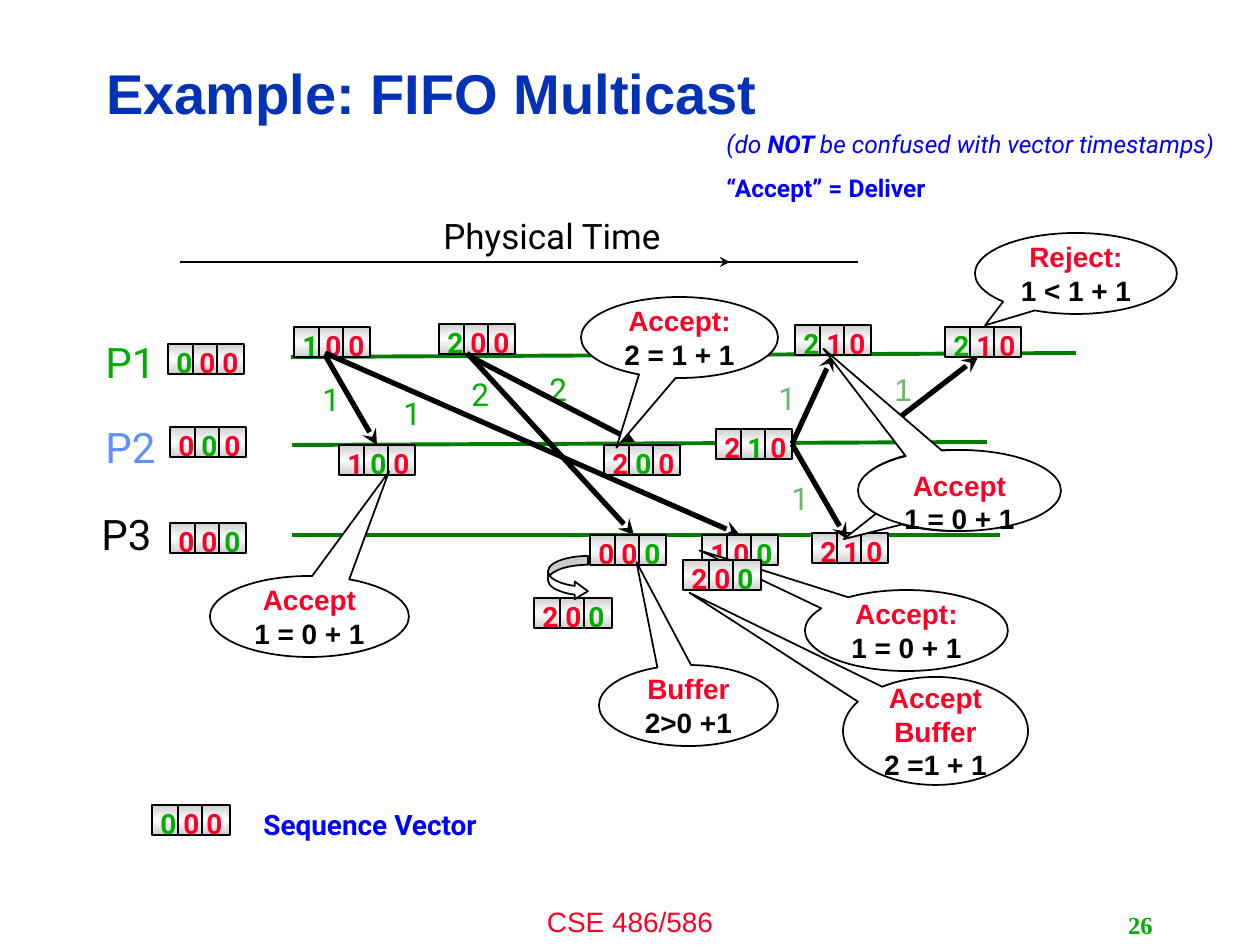
"""Build the FIFO multicast example slide with its timelines, sequence vectors and callouts."""
from copy import deepcopy
from lxml import etree
from pptx import Presentation
from pptx import util as u
from pptx.dml.color import RGBColor
from pptx.enum import shapes, text
from pptx.oxml.ns import qn

PX = 914400 / 126
COLORS = {"blue": "0332B7", "note": "0000FF", "red": "FC0128", "green": "00AE00",
          "pale": "6BB76D", "sky": "618FFD", "timeline": "037C03", "black": "000000",
          "white": "FFFFFF", "gray": "CECECE"}
RGB = {name: RGBColor.from_string(value) for name, value in COLORS.items()}
LEFT, CENTER, RIGHT = text.PP_ALIGN.LEFT, text.PP_ALIGN.CENTER, text.PP_ALIGN.RIGHT

presentation = Presentation()
presentation.slide_width, presentation.slide_height = u.Inches(10), u.Inches(7.5)
slide = presentation.slides.add_slide(presentation.slide_layouts[6])
tree = slide.shapes


def write(shape, lines, size, font="Roboto", bold=False, align=LEFT, anchor="TOP"):
    """Fill a shape with lines, each a list of (words, color) runs."""
    frame = shape.text_frame
    frame.word_wrap = True
    frame.vertical_anchor = text.MSO_ANCHOR[anchor]
    for index, line in enumerate(lines):
        paragraph = frame.add_paragraph() if index else frame.paragraphs[0]
        paragraph.alignment = align
        for words, color in line:
            run = paragraph.add_run()
            run.text = words
            run.font.name, run.font.size, run.font.bold = font, u.Pt(size), bold
            run.font.color.rgb = RGB[color]
    return frame


def connect(x1, y1, x2, y2, width=1, color="black", arrow=False):
    """Draw a straight line, with a stealth head at its end if asked."""
    line = tree.add_connector(shapes.MSO_CONNECTOR.STRAIGHT,
                              *[round(n * PX) for n in (x1, y1, x2, y2)])
    line.line.width = u.Pt(width)
    line.line.color.rgb = RGB[color]
    properties = line._element.spPr
    if arrow:
        etree.SubElement(properties.find(qn("a:ln")), qn("a:tailEnd"), type="stealth")
    etree.SubElement(properties, qn("a:effectLst"))
    return line


labels = [
    (94, 45, 1005, 102, "Example: FIFO Multicast", 32, "Arial", "blue", True, LEFT, "MIDDLE"),
    (420, 898, 420, 47, "CSE 486/586", 16, "Arial", "red", False, CENTER, "TOP"),
    (903, 905, 262, 40, "26", 14, "Times New Roman", "green", True, RIGHT, "MIDDLE"),
    (431, 208, 316, 50, "Physical Time", 20, "Roboto", "black", False, LEFT, "TOP"),
    (251, 801, 368, 47, "Sequence Vector", 16, "Roboto", "note", True, LEFT, "TOP"),
    (93, 330, 159, 58, "P1", 24, "Roboto", "green", False, LEFT, "TOP"),
    (93, 415, 159, 58, "P2", 24, "Roboto", "sky", False, LEFT, "TOP"),
    (89, 502, 159, 58, "P3", 24, "Roboto", "black", False, LEFT, "TOP"),
]
message_numbers = [(310, 374, "1", "green"), (391, 388, "1", "green"),
                   (459, 369, "2", "green"), (537, 364, "2", "green"),
                   (766, 373, "1", "pale"), (779, 473, "1", "pale")]
labels += [(x, y, 44, 47, number, 18, "Roboto", color, False, LEFT, "TOP")
           for x, y, number, color in message_numbers]
labels.append((882, 364, 44, 50, "1", 18, "Arial", "pale", False, LEFT, "TOP"))
for x, y, w, h, words, size, font, color, bold, align, anchor in labels:
    label = tree.add_textbox(*[round(n * PX) for n in (x, y, w, h)])
    frame = write(label, [[(words, color)]], size, font, bold, align, anchor)
    if size == 32:
        frame.paragraphs[0].line_spacing = 0.9

note = tree.add_textbox(*[round(n * PX) for n in (714, 123, 549, 87)])
frame = write(note, [[("(do ", "note"), ("NOT ", "note"),
                      ("be confused with vector timestamps)", "note")],
                     [("“Accept” = Deliver", "note")]], 14)
for run in frame.paragraphs[0].runs:
    run.font.italic = True
frame.paragraphs[0].runs[1].font.bold = True
frame.paragraphs[1].runs[0].font.bold = True
frame.paragraphs[1].space_before = u.Pt(8)

connect(180, 262, 858, 262)
connect(693, 262, 730, 262, arrow=True)
for x1, y1, x2, y2 in [(291, 357, 1076, 353), (292, 445, 987, 442), (292, 535, 1000, 535)]:
    connect(x1, y1, x2, y2, 2.25, "timeline")

vectors = [
    ("P1 start", 168, 344, 76, "000", "grr"), ("P2 start", 170, 427, 76, "000", "rgr"),
    ("P3 start", 170, 523, 76, "000", "rrg"), ("legend", 152, 805, 78, "000", "grr"),
    ("P1 first", 294, 327, 76, "100", "grr"), ("P1 second", 439, 324, 76, "200", "grr"),
    ("P2 first", 339, 445, 76, "100", "rgr"), ("P3 early", 590, 535, 76, "000", "rrg"),
    ("P2 second", 604, 445, 76, "200", "rgr"), ("P3 first", 702, 535, 76, "100", "rrg"),
    ("P2 send", 716, 429, 76, "210", "rgr"), ("P1 third", 795, 325, 76, "210", "grr"),
    ("P3 third", 812, 533, 76, "210", "rrr"), ("P1 last", 945, 327, 76, "210", "grr"),
    ("buffered", 534, 598, 78, "200", "rrg"), ("released", 683, 560, 78, "200", "rrg"),
]
boxes = {}
for name, x, y, w, digits, hues in vectors:
    box = tree.add_shape(shapes.MSO_SHAPE.RECTANGLE, *[round(n * PX) for n in (x, y, w, 30)])
    box.shadow.inherit = False
    box.fill.gradient()
    box.fill.gradient_angle = 90
    stops = box.fill.gradient_stops
    for stop, position, color in zip(stops, (0, 0.5), ("gray", "white")):
        stop.position, stop.color.rgb = position, RGB[color]
    stop_list = box._element.spPr.find(qn("a:gradFill")).find(qn("a:gsLst"))
    last_stop = deepcopy(stop_list[0])
    last_stop.set("pos", "100000")
    stop_list.append(last_stop)
    box.line.color.rgb, box.line.width = RGB["black"], u.Pt(1)
    dividers = [connect(x + w // 3, y + 1, x + w // 3, y + 31),
                connect(x + w * 13 // 20, y, x + w * 13 // 20, y + 30)]
    numbers = tree.add_textbox(*[round(n * PX) for n in (x - 4, y - 5, 120, 43)])
    runs = [(digit if index == 0 else " " + digit, {"g": "green", "r": "red"}[hue])
            for index, (digit, hue) in enumerate(zip(digits, hues))]
    write(numbers, [runs], 16, bold=True)
    boxes[name] = box
released_parts = [box, *dividers, numbers]

messages = [
    (325, 355, 378, 442, None, ("P2 first", 0)),
    (325, 353, 741, 533, None, ("P3 first", 0)),
    (467, 353, 634, 535, None, None),
    (471, 357, 635, 442, None, None),
    (789, 442, 834, 355, ("P2 send", 3), ("P1 third", 2)),
    (795, 446, 847, 539, ("P2 send", 3), None),
    (900, 417, 978, 357, None, None),
]
for x1, y1, x2, y2, start, end in messages:
    arrow = connect(x1, y1, x2, y2, 3, arrow=True)
    if start:
        arrow.begin_connect(boxes[start[0]], start[1])
    if end:
        arrow.end_connect(boxes[end[0]], end[1])

CALLOUT = shapes.MSO_SHAPE.OVAL_CALLOUT
bubbles = [
    (CALLOUT, 975, 233, 202, 81, (-0.45, 0.64), "Reject:", "1 < 1 + 1", "MIDDLE"),
    (CALLOUT, 210, 576, 199, 81, (0.4, -1.79), "Accept", "1 = 0 + 1", "MIDDLE"),
    (CALLOUT, 581, 297, 197, 81, (-0.32, 1.36), "Accept:", "2 = 1 + 1", "MIDDLE"),
    (shapes.MSO_SHAPE.CURVED_RIGHT_ARROW, 548, 556, 40, 44, (0.22, 0.44, 0.33), "", "", "TOP"),
    (CALLOUT, 599, 665, 179, 81, (-0.29, -1.77), "Buffer", "2>0 +1", "MIDDLE"),
    (CALLOUT, 805, 590, 203, 81, (-1.02, -0.99), "Accept:", "1 = 0 + 1", "MIDDLE"),
    (CALLOUT, 843, 677, 185, 108, (-1.33, -1.28), "Accept Buffer", "2 =1 + 1", "MIDDLE"),
    (CALLOUT, 859, 450, 190, 81, (-0.58, 0.6), "", "", "TOP"),
    (CALLOUT, 858, 450, 203, 81, (-0.67, -1.75), "Accept", "1 = 0 + 1", "TOP"),
]
for kind, x, y, w, h, adjustments, verdict, reason, anchor in bubbles:
    bubble = tree.add_shape(kind, *[round(n * PX) for n in (x, y, w, h)])
    bubble.shadow.inherit = False
    bubble.fill.solid()
    bubble.fill.fore_color.rgb = RGB["white"]
    bubble.line.color.rgb, bubble.line.width = RGB["black"], u.Pt(1)
    for index, value in enumerate(adjustments):
        bubble.adjustments[index] = value
    if verdict:
        write(bubble, [[(verdict, "red")], [(reason, "black")]], 16, "Arial", True, CENTER, anchor)

for part in released_parts:
    tree._spTree.append(part._element)

presentation.save("out.pptx")
